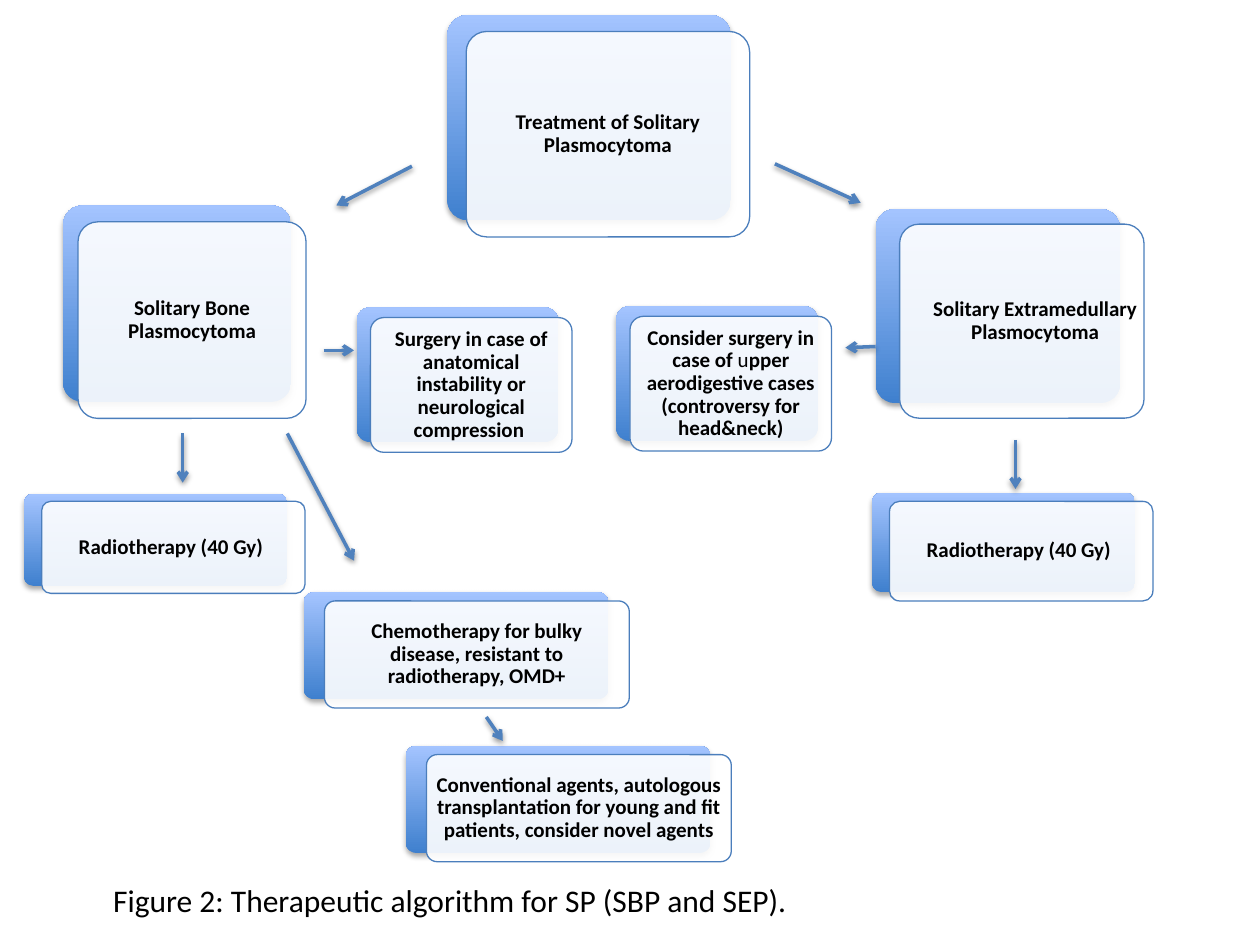
from typing import NamedTuple

from lxml.etree import SubElement
from pptx import Presentation
from pptx.dml.color import RGBColor
from pptx.enum.shapes import MSO_CONNECTOR, MSO_SHAPE
from pptx.enum.text import MSO_ANCHOR, MSO_AUTO_SIZE, PP_ALIGN
from pptx.oxml.ns import qn
from pptx.util import Pt


class Card(NamedTuple):
    x: float
    y: float
    w: float
    h: float
    dx: float
    dy: float
    text: str
    shift: float = 0


class Arrow(NamedTuple):
    x1: float
    y1: float
    x2: float
    y2: float


CARDS = [
    Card(255.6, 8.6, 162, 117.4, 10.8, 9.4, "Treatment of Solitary Plasmocytoma"),
    Card(36, 117.4, 130.3, 112.3, 8.6, 9.4, "Solitary Bone Plasmocytoma"),
    Card(500.4, 119.5, 139.7, 110.9, 13.7, 8.6,
         "Solitary Extramedullary Plasmocytoma", 7.6),
    Card(13.7, 282.2, 150.5, 52.6, 10.1, 4.3, "Radiotherapy (40 Gy) "),
    Card(498.2, 281.5, 150.5, 56.9, 10.1, 5, "Radiotherapy (40 Gy) "),
    Card(203.8, 175.7, 115.2, 77, 7.9, 5.8,
         "Surgery in case of anatomical instability or neurological compression "),
    Card(352.1, 175, 115.2, 77, 7.9, 5.8,
         "Consider surgery in case of |u|pper aerodigestive cases "
         "(controversy for head&neck)"),
    Card(173.5, 338.4, 174.2, 61.2, 11.9, 5,
         "Chemotherapy for bulky disease, resistant to radiotherapy, OMD+"),
    Card(231.8, 426.2, 174.2, 61.2, 11.9, 5,
         "Conventional agents, autologous transplantation for young and fit "
         "patients, consider novel agents"),
]

ARROWS = [
    Arrow(104.4, 247.7, 104.4, 275.8),
    Arrow(164.2, 247.7, 202.3, 320.4),
    Arrow(185, 200.2, 202.3, 200.2),
    Arrow(500.4, 198, 483.1, 198.7),
    Arrow(580.3, 251.3, 580.3, 279.4),
    Arrow(442.8, 93.6, 491.8, 115.9),
    Arrow(235.4, 95, 192.2, 117.4),
    Arrow(277.9, 409.7, 287.3, 423.4),
]


def tint(code: str) -> RGBColor:
    return RGBColor.from_string(code)


def shade(shape, dist: float, alpha: int) -> None:
    box = SubElement(shape._element.spPr, qn("a:effectLst"))
    cast = SubElement(box, qn("a:outerShdw"), blurRad=str(Pt(3.1)),
                      dist=str(Pt(dist)), dir="5400000", rotWithShape="0")
    ink = SubElement(cast, qn("a:srgbClr"), val="000000")
    SubElement(ink, qn("a:alpha"), val=str(alpha * 1000))


def style(para, size: float, bold: bool) -> None:
    font = para.font
    font.name, font.size, font.bold = "Calibri", Pt(size), bold
    font.color.rgb = tint("000000")


def panel(group, x: float, y: float, w: float, h: float):
    shape = group.shapes.add_shape(
        MSO_SHAPE.ROUNDED_RECTANGLE, Pt(x), Pt(y), Pt(w), Pt(h))
    shape.adjustments[0] = 0.1
    return shape


def label(group, card: Card) -> None:
    pad = 0.03 * min(card.w, card.h)
    box = group.shapes.add_textbox(
        Pt(card.x + card.dx + pad + card.shift), Pt(card.y + card.dy + pad),
        Pt(card.w - 2 * pad), Pt(card.h - 2 * pad))
    frame = box.text_frame
    frame.word_wrap = True
    frame.vertical_anchor = MSO_ANCHOR.MIDDLE
    frame.margin_left = frame.margin_right = Pt(3.6)
    frame.margin_top = frame.margin_bottom = Pt(3.6)
    para = frame.paragraphs[0]
    para.alignment = PP_ALIGN.CENTER
    para.line_spacing = 0.9
    para.space_after = Pt(4.2)
    style(para, 12, True)
    for spot, part in enumerate(card.text.split("|")):
        run = para.add_run()
        run.text = part
        if spot % 2:
            run.font.bold = False


def draw_card(slide, card: Card) -> None:
    group = slide.shapes.add_group_shape()
    back = panel(group, card.x, card.y, card.w, card.h)
    back.fill.gradient()
    back.fill.gradient_angle = 90
    for stop, code in zip(back.fill.gradient_stops, ("3F80CE", "A4C4FF")):
        stop.color.rgb = tint(code)
    back.line.fill.background()
    shade(back, 1.8, 35)

    front = panel(group, card.x + card.dx, card.y + card.dy, card.w, card.h)
    front.shadow.inherit = False
    front.fill.solid()
    front.fill.fore_color.rgb = tint("FFFFFF")
    ink = front._element.spPr.find(qn("a:solidFill"))[0]
    SubElement(ink, qn("a:alpha"), val="90000")
    front.line.color.rgb = tint("4B7EBC")
    front.line.width = Pt(0.75)
    label(group, card)


def draw_arrow(slide, arrow: Arrow) -> None:
    link = slide.shapes.add_connector(
        MSO_CONNECTOR.STRAIGHT, *(Pt(v) for v in arrow))
    link.line.color.rgb = tint("4F81BD")
    link.line.width = Pt(2)
    SubElement(link.line._get_or_add_ln(), qn("a:tailEnd"), type="arrow")
    shade(link, 1.6, 38)


def draw_title(slide) -> None:
    box = slide.shapes.add_textbox(Pt(57.6), Pt(499.7), Pt(401.8), Pt(28.8))
    frame = box.text_frame
    frame.word_wrap = False
    frame.auto_size = MSO_AUTO_SIZE.SHAPE_TO_FIT_TEXT
    para = frame.paragraphs[0]
    style(para, 18, False)
    para.add_run().text = "Figure 2: Therapeutic algorithm for SP (SBP and SEP)."


def main() -> None:
    deck = Presentation()
    deck.slide_width, deck.slide_height = Pt(720), Pt(540)
    slide = deck.slides.add_slide(deck.slide_layouts[6])
    for card in CARDS:
        draw_card(slide, card)
    for arrow in ARROWS:
        draw_arrow(slide, arrow)
    draw_title(slide)
    deck.save("out.pptx")


if __name__ == "__main__":
    main()
